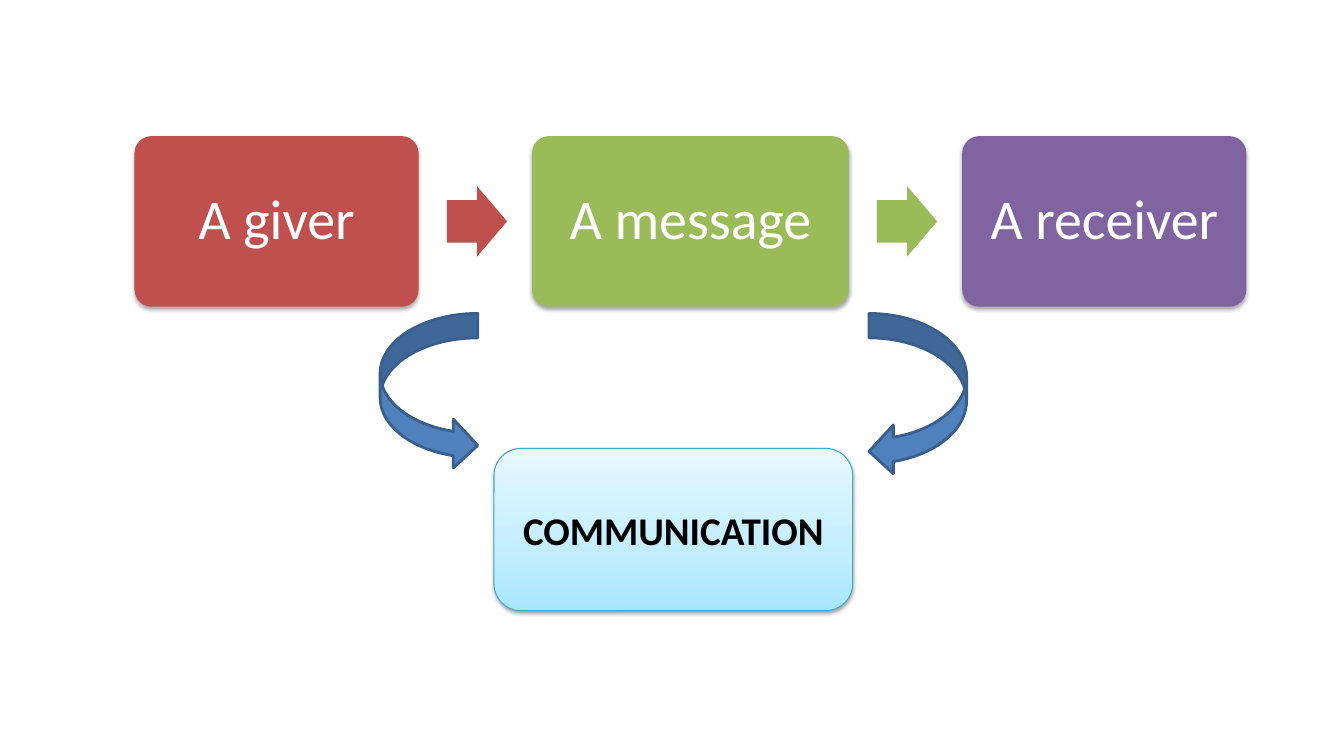
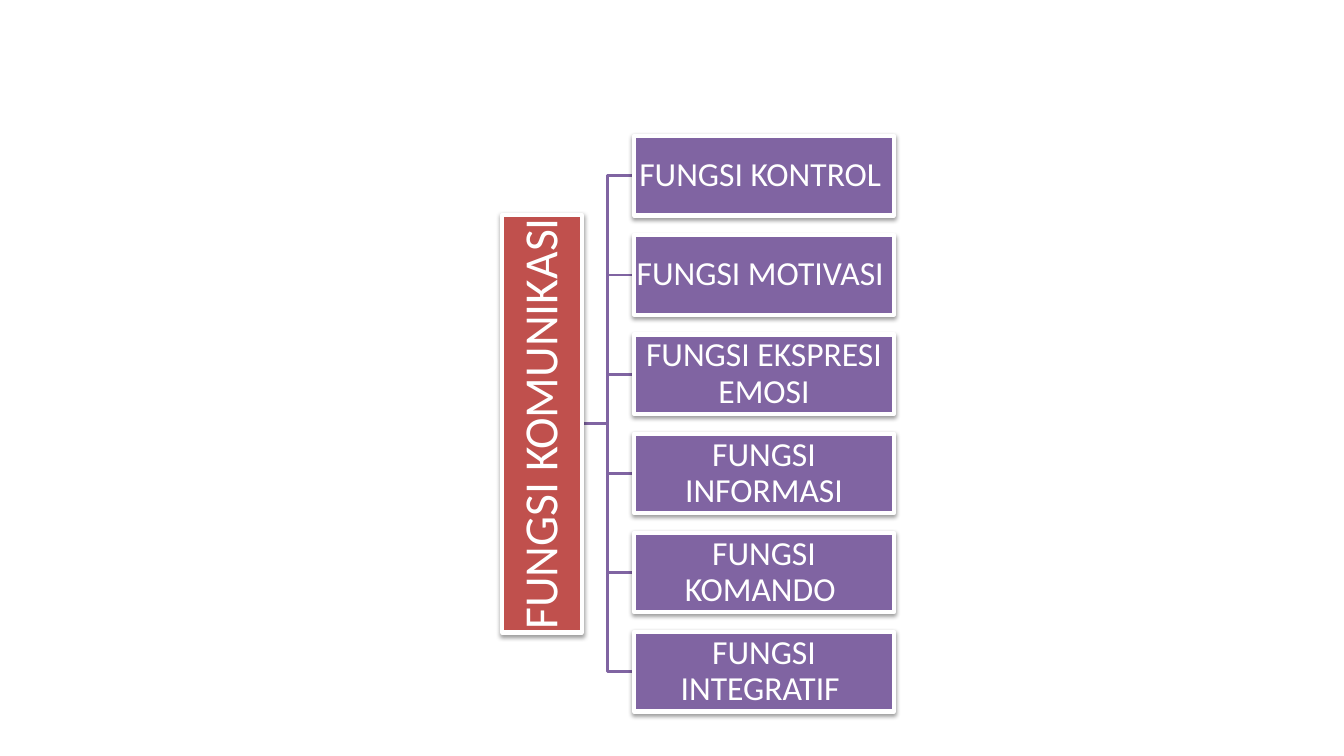
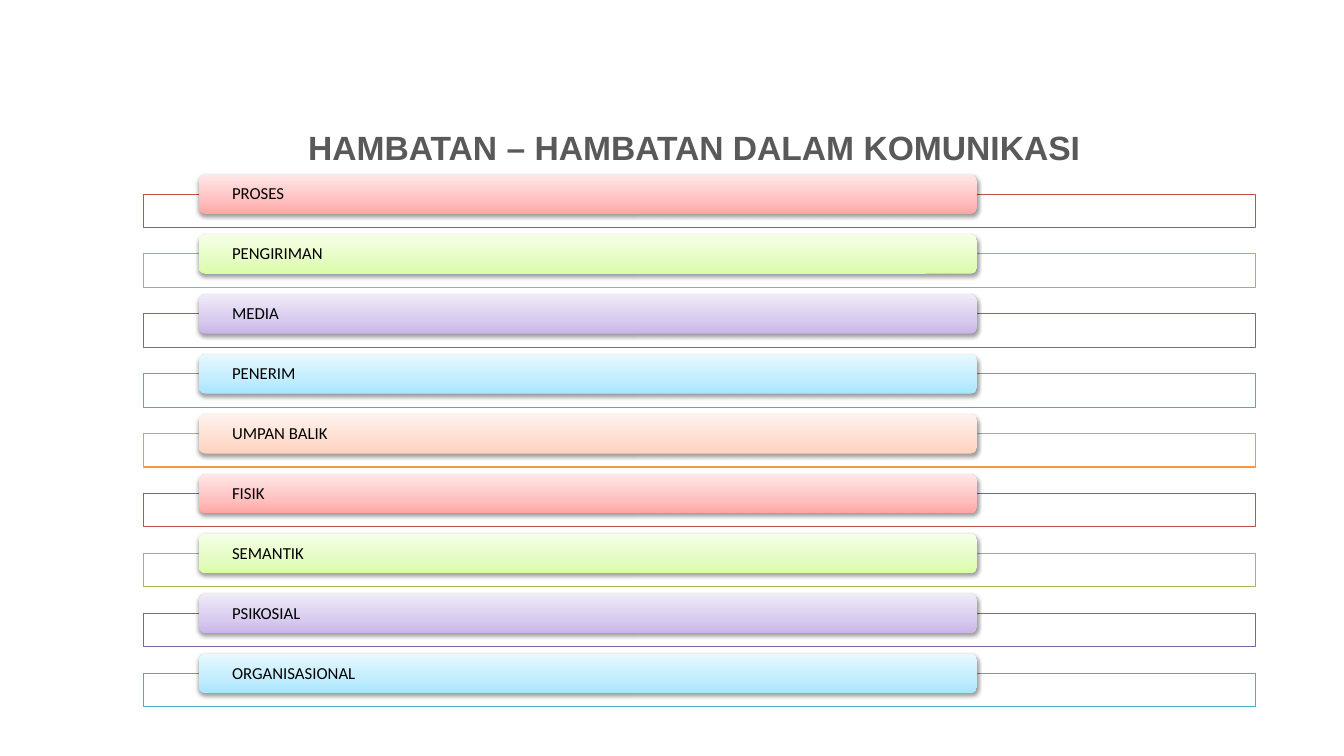
import copy

import pptx
import pptx.dml.color
import pptx.enum.shapes
import pptx.enum.text
import pptx.oxml.ns
import pptx.util
from lxml import etree

Cm, Pt = pptx.util.Cm, pptx.util.Pt
SHAPE = pptx.enum.shapes.MSO_SHAPE
ALIGN = pptx.enum.text.PP_ALIGN
qn = pptx.oxml.ns.qn

COLOURS = {
    "white": "FFFFFF", "black": "000000", "title": "595959",
    "red": "C0504D", "green": "9BBB59", "purple": "8064A2",
    "aqua": "4BACC6", "orange": "F79646", "blue": "4F81BD",
    "blue edge": "3A5F8C", "aqua edge": "46AAC5",
}
# Gradient colours from the bottom of a shape to its top
TINTS = {
    "red": ("FFA6A5", "FFC0BF", "FFE7E7"),
    "green": ("DAFDA7", "E4FCC2", "F5FFE7"),
    "purple": ("C9B5E8", "D8CBEE", "F0EAF9"),
    "aqua": ("A7E6FF", "C1EDFF", "E7F8FF"),
    "orange": ("FFD2BD", "FFDED0", "FFF2ED"),
}
TINT_POSITIONS = (0, 0.35, 1)
# Opacity in percent, distance in points
SOFT_SHADOW = (35, 1.8)
FIRM_SHADOW = (38, 1.6)

BARRIERS = ("PROSES", "PENGIRIMAN", "MEDIA", "PENERIM", "UMPAN BALIK",
            "FISIK", "SEMANTIK", "PSIKOSIAL", "ORGANISASIONAL")
FUNCTIONS = ("FUNGSI KONTROL ", "FUNGSI MOTIVASI ", "FUNGSI EKSPRESI EMOSI",
             "FUNGSI INFORMASI", "FUNGSI KOMANDO ", "FUNGSI INTEGRATIF ")


def rgb(hex_colour):
    return pptx.dml.color.RGBColor.from_string(hex_colour)


def write_text(shape, text, size, colour="white", font="Calibri", bold=False,
               align=ALIGN.CENTER, spacing=None, insets=None):
    """Write one paragraph; insets are (horizontal, vertical) in cm."""
    frame = shape.text_frame
    frame.word_wrap = True
    frame.auto_size = pptx.enum.text.MSO_AUTO_SIZE.NONE
    frame.vertical_anchor = pptx.enum.text.MSO_ANCHOR.MIDDLE
    if insets:
        frame.margin_left = frame.margin_right = Cm(insets[0])
        frame.margin_top = frame.margin_bottom = Cm(insets[1])
    paragraph = frame.paragraphs[0]
    paragraph.alignment = align
    if spacing:
        paragraph.line_spacing = spacing
    run = paragraph.add_run()
    run.text = text
    run.font.name = font
    run.font.size = Pt(size)
    run.font.bold = bold
    run.font.color.rgb = rgb(COLOURS[colour])


def fill_with_tint(shape, tint):
    shape.fill.gradient()
    shape.fill.gradient_angle = 90
    stop_list = shape._element.spPr.find(".//" + qn("a:gsLst"))
    stop_list.insert(1, copy.deepcopy(stop_list[0]))
    stops = zip(shape.fill.gradient_stops, TINTS[tint], TINT_POSITIONS)
    for stop, colour, position in stops:
        stop.color.rgb = rgb(colour)
        stop.position = position


def cast_shadow(shape, opacity, distance):
    effects = shape._element.spPr.find(qn("a:effectLst"))
    shadow = etree.SubElement(
        effects, qn("a:outerShdw"), blurRad=str(Pt(3.1)),
        dist=str(Pt(distance)), dir="5400000", rotWithShape="0")
    black = etree.SubElement(shadow, qn("a:srgbClr"), val=COLOURS["black"])
    etree.SubElement(black, qn("a:alpha"), val=str(opacity * 1000))


def add_shape(slide, kind, box, fill=None, tint=None, opacity=None, line=None,
              line_width=0.75, shadow=None, adjustments=()):
    """Add a preset shape in a (left, top, width, height) box in cm."""
    shape = slide.shapes.add_shape(kind, *map(Cm, box))
    for index, value in enumerate(adjustments):
        shape.adjustments[index] = value
    if tint:
        fill_with_tint(shape, tint)
    else:
        shape.fill.solid()
        shape.fill.fore_color.rgb = rgb(COLOURS[fill])
    if opacity:
        colour = shape._element.spPr.find(qn("a:solidFill"))[0]
        etree.SubElement(colour, qn("a:alpha"), val=str(opacity * 1000))
    if line:
        shape.line.color.rgb = rgb(COLOURS[line])
        shape.line.width = Pt(line_width)
    else:
        shape.line.fill.background()
    shape.shadow.inherit = False
    if shadow:
        cast_shadow(shape, *shadow)
    return shape


def add_process(slide, left, top, height):
    """Row of the three parts of communication with arrows between them."""
    gap, arrow_offset, arrow_width, arrow_height = 2.86, 0.71, 1.52, 1.78
    parts = (("A giver", "red", 7.16), ("A message", "green", 7.98),
             ("A receiver", "purple", 7.16))
    for index, (text, colour, width) in enumerate(parts):
        part = add_shape(slide, SHAPE.ROUNDED_RECTANGLE,
                         (left, top, width, height), fill=colour,
                         shadow=SOFT_SHADOW, adjustments=(0.1,))
        write_text(part, text, 40, spacing=0.9, insets=(0.56, 0.56))
        left += width
        if index < len(parts) - 1:
            add_shape(slide, SHAPE.RIGHT_ARROW,
                      (left + arrow_offset, top + (height - arrow_height) / 2,
                       arrow_width, arrow_height),
                      fill=colour, adjustments=(0.6, 0.5))
        left += gap


def add_outcome(slide, left, top):
    """Two curved arrows leading down to the communication box."""
    arrows = ((SHAPE.CURVED_RIGHT_ARROW, 0, 3.94),
              (SHAPE.CURVED_LEFT_ARROW, 12.32, 4.09))
    for kind, offset, height in arrows:
        add_shape(slide, kind, (left + offset, top, 2.46, height),
                  fill="blue", line="blue edge", line_width=2)
    outcome = add_shape(slide, SHAPE.ROUNDED_RECTANGLE,
                        (left + 2.87, top + 3.4, 9.04, 4.09), tint="aqua",
                        line="aqua edge", shadow=FIRM_SHADOW)
    write_text(outcome, "COMMUNICATION", 28, "black", bold=True)


def add_branch(slide, root, leaf):
    branch = slide.shapes.add_connector(
        pptx.enum.shapes.MSO_CONNECTOR.ELBOW, 0, 0, 0, 0)
    branch.begin_connect(root, 3)
    branch.end_connect(leaf, 1)
    branch.line.color.rgb = rgb(COLOURS["purple"])
    branch.line.width = Pt(2)
    etree.SubElement(branch._element.spPr, qn("a:effectLst"))
    # Behind the boxes, so that their white borders stay whole
    slide.shapes._spTree.insert(2, branch._element)


def add_function_tree(slide, left, top):
    """Upright root on the left, one box for each function on the right."""
    leaf_width, leaf_height, pitch = 6.55, 2, 2.5
    root_width, root_height, leaf_offset = 2, 10.52, 3.32
    tree_height = pitch * (len(FUNCTIONS) - 1) + leaf_height
    frame = {"line": "white", "line_width": 3, "shadow": FIRM_SHADOW}
    lettering = {"spacing": 0.9, "insets": (0.05, 0.05)}

    root = add_shape(slide, SHAPE.RECTANGLE,
                     (left, top + (tree_height - root_height) / 2,
                      root_width, root_height), fill="red", **frame)
    write_text(root, "FUNGSI KOMUNIKASI ", 34, **lettering)
    root._element.txBody.find(qn("a:bodyPr")).set("vert", "vert270")

    for index, text in enumerate(FUNCTIONS):
        leaf = add_shape(slide, SHAPE.RECTANGLE,
                         (left + leaf_offset, top + index * pitch,
                          leaf_width, leaf_height), fill="purple", **frame)
        write_text(leaf, text, 24, **lettering)
        add_branch(slide, root, leaf)


def add_barrier_list(slide, left, top, width):
    pitch = 1.51
    tints = tuple(TINTS)
    for index, text in enumerate(BARRIERS):
        colour = tints[index % len(tints)]
        row_top = top + index * pitch
        add_shape(slide, SHAPE.RECTANGLE, (left, row_top + 0.49, width, 0.84),
                  fill="white", opacity=90, line=colour)
        label = add_shape(slide, SHAPE.ROUNDED_RECTANGLE,
                          (left + 1.4, row_top, 0.7 * width, 0.99),
                          tint=colour, shadow=FIRM_SHADOW)
        write_text(label, text, 12, "black", align=ALIGN.LEFT, spacing=0.9,
                   insets=(0.79, 0))


def place_title(slide, text, box):
    title = slide.shapes.title
    title.left, title.top, title.width, title.height = map(Cm, box)
    write_text(title, text, 24, "title", font="Arial", bold=True)


def main():
    deck = pptx.Presentation()
    deck.slide_width, deck.slide_height = Cm(33.87), Cm(19.05)
    title_only, blank = deck.slide_layouts[5], deck.slide_layouts[6]

    process = deck.slides.add_slide(blank)
    add_process(process, 3.39, 3.43, 4.3)
    add_outcome(process, 9.58, 7.9)

    functions = deck.slides.add_slide(blank)
    add_function_tree(functions, 12.66, 3.43)

    barriers = deck.slides.add_slide(title_only)
    place_title(barriers, "HAMBATAN – HAMBATAN DALAM KOMUNIKASI ",
                (3.61, 3.1, 28, 1.2))
    add_barrier_list(barriers, 3.61, 4.4, 28.02)

    deck.save("out.pptx")


if __name__ == "__main__":
    main()
